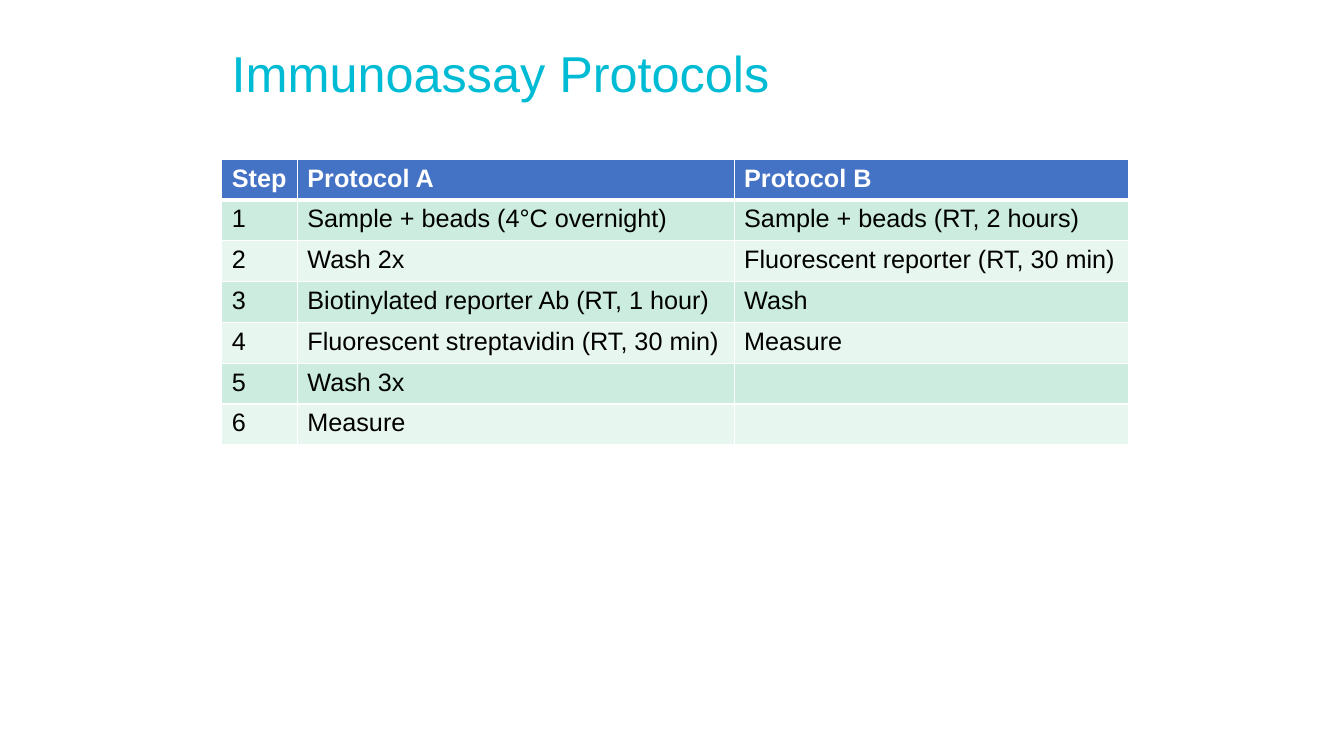
from dataclasses import dataclass

from lxml.etree import SubElement
from pptx import Presentation
from pptx.dml.color import RGBColor as RGB
from pptx.enum.text import MSO_ANCHOR as Anchor
from pptx.oxml.ns import qn
from pptx.slide import Slide
from pptx.table import _Cell as Cell
from pptx.text.text import TextFrame
from pptx.util import Inches, Pt


@dataclass(frozen=True)
class Theme:
    font: str = "Arial"
    title: str = "00BBD4"
    header: str = "4472C4"
    bands: tuple[str, str] = ("CBECDE", "E7F6EF")
    text: str = "000000"
    white: str = "FFFFFF"
    title_size: int = 36
    table_size: int = 18
    thin: int = 1
    thick: int = 3


@dataclass(frozen=True)
class Box:
    col: float
    row: float
    cols: float
    rows: float

    def place(self) -> tuple[int, int, int, int]:
        return x(self.col), y(self.row), x(self.cols), y(self.rows)


@dataclass(frozen=True)
class Column:
    header: str
    cols: float
    steps: tuple[str, ...]


THEME = Theme()
WIDTH, HEIGHT = Inches(13.33), Inches(7.5)
GRID_COLS, GRID_ROWS = 40, 30
ROW_HEIGHT = 1.62
STEP_COUNT = 6

COLUMNS = (
    Column("Step", 2.25, tuple(str(n + 1) for n in range(STEP_COUNT))),
    Column("Protocol A", 13, (
        "Sample + beads (4°C overnight)",
        "Wash 2x",
        "Biotinylated reporter Ab (RT, 1 hour)",
        "Fluorescent streptavidin (RT, 30 min)",
        "Wash 3x",
        "Measure",
    )),
    Column("Protocol B", 11.75, (
        "Sample + beads (RT, 2 hours)",
        "Fluorescent reporter (RT, 30 min)",
        "Wash",
        "Measure",
        "",
        "",
    )),
)
TITLE_BOX = Box(6.6, 1.24, 27, 3.6)
TABLE_BOX = Box(6.6, 6.32, 27, ROW_HEIGHT * (STEP_COUNT + 1))


def x(cols: float) -> int:
    return round(WIDTH * cols / GRID_COLS)


def y(rows: float) -> int:
    return round(HEIGHT * rows / GRID_ROWS)


def write(tf: TextFrame, text: str, *, size: int, color: str,
          bold: bool = False, spacing: float = 1.0) -> None:
    p = tf.paragraphs[0]
    p.line_spacing = spacing
    p.font.size = Pt(size)
    if text:
        r = p.add_run()
        r.text = text
        r.font.name = THEME.font
        r.font.size = Pt(size)
        r.font.bold = bold
        r.font.color.rgb = RGB.from_string(color)


def add_borders(cell: Cell, *, top: int, bottom: int) -> None:
    tc_pr = cell._tc.get_or_add_tcPr()
    widths = {"L": THEME.thin, "R": THEME.thin, "T": top, "B": bottom}
    for side, width in widths.items():
        ln = SubElement(tc_pr, qn(f"a:ln{side}"), w=str(Pt(width)))
        fill = SubElement(ln, qn("a:solidFill"))
        SubElement(fill, qn("a:srgbClr"), val=THEME.white)


def add_title(s: Slide, text: str) -> None:
    tf = s.shapes.add_textbox(*TITLE_BOX.place()).text_frame
    tf.word_wrap = True
    tf.vertical_anchor = Anchor.MIDDLE
    write(tf, text, size=THEME.title_size, color=THEME.title, spacing=0.9)


def add_protocols(s: Slide) -> None:
    table = s.shapes.add_table(
        STEP_COUNT + 1, len(COLUMNS), *TABLE_BOX.place()).table
    for row in table.rows:
        row.height = y(ROW_HEIGHT)
    for j, column in enumerate(COLUMNS):
        table.columns[j].width = x(column.cols)
        for i, text in enumerate((column.header, *column.steps)):
            cell = table.cell(i, j)
            is_header = i == 0
            add_borders(cell,
                        top=THEME.thick if i == 1 else THEME.thin,
                        bottom=THEME.thick if is_header else THEME.thin)
            cell.fill.solid()
            cell.fill.fore_color.rgb = RGB.from_string(
                THEME.header if is_header else THEME.bands[(i - 1) % 2])
            write(cell.text_frame, text, size=THEME.table_size,
                  color=THEME.white if is_header else THEME.text,
                  bold=is_header)


def main() -> None:
    prs = Presentation()
    prs.slide_width, prs.slide_height = WIDTH, HEIGHT
    s = prs.slides.add_slide(prs.slide_layouts[6])
    add_title(s, "Immunoassay Protocols")
    add_protocols(s)
    prs.save("out.pptx")


if __name__ == "__main__":
    main()
